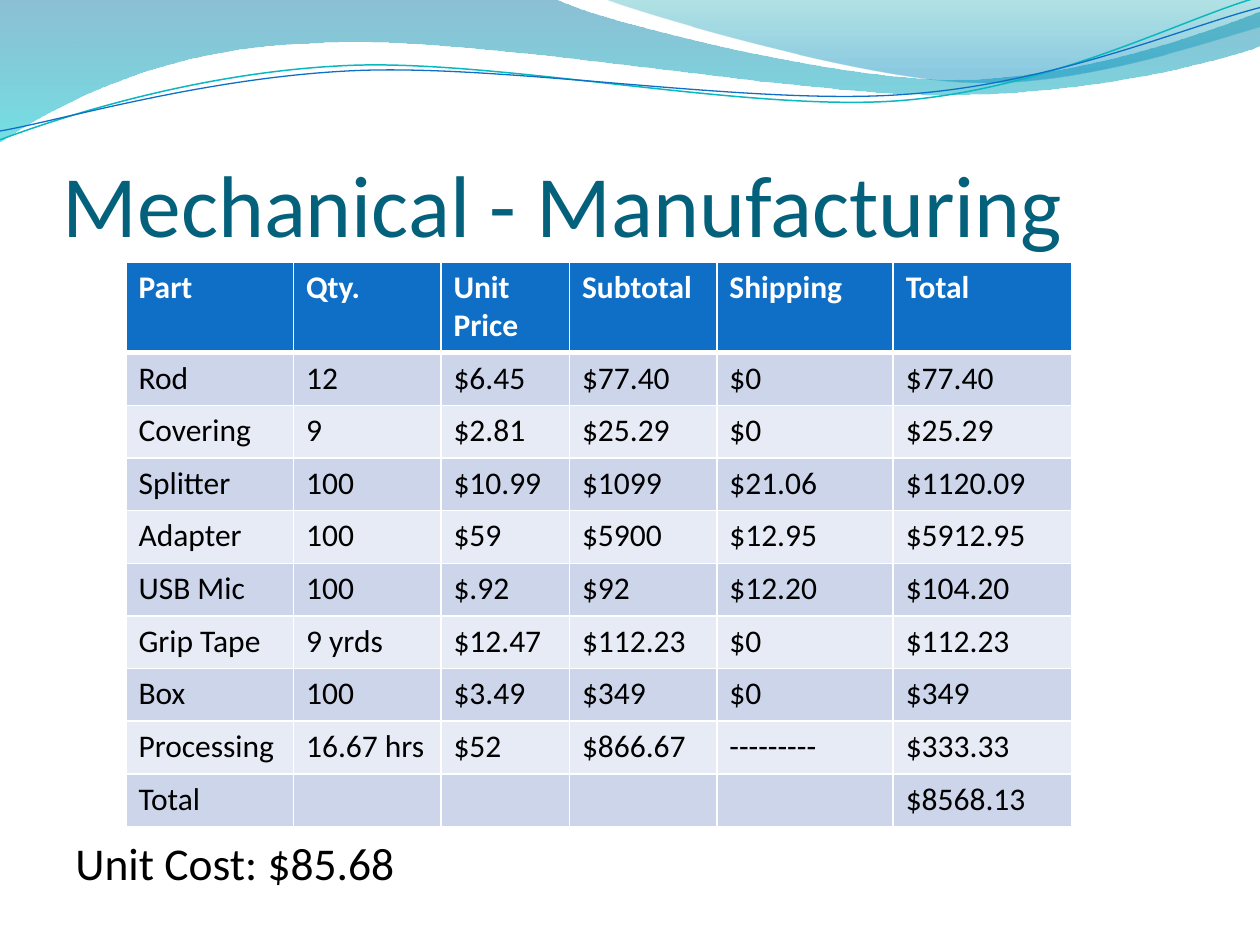
from math import cos, radians, sin

from lxml import etree
from pptx import Presentation
from pptx.dml.color import RGBColor
from pptx.enum.text import MSO_ANCHOR
from pptx.oxml.ns import qn
from pptx.util import Inches, Pt

TOP, BOTTOM = MSO_ANCHOR.TOP, MSO_ANCHOR.BOTTOM
FONT = "Calibri"
CURVE_TILT = -2.7
COLORS = {
    "title": "04617B", "text": "000000", "white": "FFFFFF",
    "header": "0F6FC6", "odd": "CCD5EA", "even": "E7EBF5",
    "teal_line": "0AB8BF", "blue_line": "0F6FC6",
    "wave_top": "0074A1", "wave_bottom": "00C6CF",
    "crest_top": "00A1A9", "crest_bottom": "008BBF",
}

# Outlines in inches: two numbers make a line, six make a Bezier curve
WAVE = [(0, 0), (4.4, -0.01), (4.76, 0.17, 6.64, 0.63, 7.58, 0.63),
        (8.53, 0.63, 9.58, 0.26, 10, 0.09), (10.01, 0.36),
        (9.83, 0.44, 8.7, 0.76, 7.46, 0.75), (6.22, 0.75, 3.82, 0.28, 2.57, 0.34),
        (1.29, 0.36, 0.46, 0.83, -0.01, 1.13), (0, 0)]
CREST = [(4.79, -0.01), (5.09, 0.11, 6.82, 0.62, 7.69, 0.65),
         (8.56, 0.69, 9.61, 0.32, 10, 0.21), (10, 0), (4.79, -0.01)]
TEAL_CURVE = [(0, 1.11), (0.48, 0.93, 1.58, 0.57, 2.77, 0.52),
              (3.95, 0.47, 5.93, 0.89, 7.13, 0.8), (8.33, 0.71, 9.38, 0.15, 9.98, -0.02)]
BLUE_CURVE = [(0, 1.04), (0.47, 0.96, 1.64, 0.61, 2.83, 0.56),
              (4.03, 0.51, 5.97, 0.84, 7.17, 0.75), (8.36, 0.67, 9.41, 0.21, 10, 0.06)]

COLUMN_WIDTHS = [1.33, 1.17, 1.02, 1.17, 1.4, 1.42]
HEADER_HEIGHT = 0.72
COSTS = [
    ["Part", "Qty.", "Unit Price", "Subtotal", "Shipping", "Total"],
    ["Rod", "12", "$6.45", "$77.40", "$0", "$77.40"],
    ["Covering", "9", "$2.81", "$25.29", "$0", "$25.29"],
    ["Splitter", "100", "$10.99", "$1099", "$21.06", "$1120.09"],
    ["Adapter", "100", "$59", "$5900", "$12.95", "$5912.95"],
    ["USB Mic", "100", "$.92", "$92", "$12.20", "$104.20"],
    ["Grip Tape", "9 yrds", "$12.47", "$112.23", "$0", "$112.23"],
    ["Box", "100", "$3.49", "$349", "$0", "$349"],
    ["Processing", "16.67 hrs", "$52", "$866.67", "---------", "$333.33"],
    ["Total", "", "", "", "", "$8568.13"],
]


def rgb(name):
    return RGBColor.from_string(COLORS[name])


def add_outline(page, box, outline, closed, tilt=0):
    """Draw an outline in its box; a tilted box turns about its centre."""
    left, top, width, height = box
    builder = page.shapes.build_freeform(Inches(left), Inches(top), scale=1.0)
    builder.add_line_segments([(Inches(left + width), Inches(top + height))], close=closed)
    shape = builder.convert_to_shape()
    shape.shadow.inherit = False
    shape.rotation = tilt

    # Replace the box diagonal by the lines and curves of the outline
    route = next(shape.element.iter(qn("a:path")))
    for child in list(route):
        route.remove(child)
    turn_cos, turn_sin = cos(radians(-tilt)), sin(radians(-tilt))
    for index, part in enumerate(outline):
        tag = "a:moveTo" if index == 0 else "a:lnTo" if len(part) == 2 else "a:cubicBezTo"
        command = etree.SubElement(route, qn(tag))
        for x, y in zip(part[::2], part[1::2]):
            dx, dy = x - left - width / 2, y - top - height / 2
            across = width / 2 + dx * turn_cos - dy * turn_sin
            down = height / 2 + dx * turn_sin + dy * turn_cos
            etree.SubElement(command, qn("a:pt"),
                             x=str(Inches(across)), y=str(Inches(down)))
    if closed:
        etree.SubElement(route, qn("a:close"))
    return shape


def add_band(page, box, outline, stops):
    """Add a translucent band; each stop is position, colour, opacity."""
    band = add_outline(page, box, outline, True)
    band.line.fill.background()
    band.fill.gradient()
    band.fill.gradient_angle = 270
    nodes = band.element.spPr.find(qn("a:gradFill")).iter(qn("a:gs"))
    for stop, node, (position, color, opacity) in zip(band.fill.gradient_stops, nodes, stops):
        stop.position = position
        stop.color.rgb = rgb(color)
        etree.SubElement(node[0], qn("a:alpha"), val=str(opacity * 1000))


def add_waves(page, box):
    left, top, width, height = box
    add_band(page, box, WAVE, [(0, "wave_top", 45), (1, "wave_bottom", 55)])
    add_band(page, (left + 4.8, top, width - 4.81, 0.7), CREST,
             [(0, "crest_top", 30), (0.8, "crest_bottom", 45)])
    # Thin curves
    curves = [(TEAL_CURVE, (left - 0.01, top + 0.23, width, 0.71), "teal_line", 0.85),
              (BLUE_CURVE, (left - 0.01, top + 0.31, width + 0.01, 0.58), "blue_line", 0.75)]
    for outline, area, color, weight in curves:
        curve = add_outline(page, area, outline, False, CURVE_TILT)
        curve.fill.background()
        curve.line.color.rgb = rgb(color)
        curve.line.width = Pt(weight)


def set_font(para, size, color, bold=False):
    para.font.name = FONT
    para.font.size = Pt(size)
    para.font.bold = bold
    para.font.color.rgb = rgb(color)


def add_text(page, box, text, size, color, anchor, side_margin):
    frame = page.shapes.add_textbox(*map(Inches, box)).text_frame
    frame.word_wrap = True
    frame.vertical_anchor = anchor
    frame.margin_left = frame.margin_right = Inches(side_margin)
    if anchor == BOTTOM:
        frame.margin_bottom = 0
    para = frame.paragraphs[0]
    para.text = text
    set_font(para, size, color)


def add_borders(cell, widths):
    properties = cell._tc.get_or_add_tcPr()
    for side, width in widths.items():
        line = etree.SubElement(properties, qn(f"a:ln{side}"), w=str(Pt(width)))
        fill = etree.SubElement(line, qn("a:solidFill"))
        etree.SubElement(fill, qn("a:srgbClr"), val=COLORS["white"])


def add_cost_table(page, box):
    table = page.shapes.add_table(len(COSTS), len(COLUMN_WIDTHS),
                                  *map(Inches, box)).table
    row_height = (box[3] - HEADER_HEIGHT) / (len(COSTS) - 1)
    for column, width in zip(table.columns, COLUMN_WIDTHS):
        column.width = Inches(width)
    for r, values in enumerate(COSTS):
        header = r == 0
        table.rows[r].height = Inches(HEADER_HEIGHT if header else row_height)
        fill = "header" if header else "odd" if r % 2 else "even"
        for c, value in enumerate(values):
            cell = table.cell(r, c)
            add_borders(cell, {"L": 1, "R": 1, "T": 3 if r == 1 else 1,
                               "B": 3 if header else 1})
            cell.fill.solid()
            cell.fill.fore_color.rgb = rgb(fill)
            para = cell.text_frame.paragraphs[0]
            para.text = value
            set_font(para, 18, "white" if header else "text", header)


def main():
    deck = Presentation()
    deck.slide_width, deck.slide_height = Inches(10), Inches(7.5)
    page = deck.slides.add_slide(deck.slide_layouts[6])
    add_waves(page, (-0.01, -0.01, 10.02, 1.14))
    add_text(page, (0.5, 0.77, 9, 1.25), "Mechanical - Manufacturing",
             50, "title", BOTTOM, 0)
    add_cost_table(page, (1, 2.08, 7.5, 4.48))
    add_text(page, (0.5, 6.58, 9, 0.67), "Unit Cost: $85.68", 26, "text", TOP, 0.1)
    deck.save("out.pptx")


if __name__ == "__main__":
    main()
